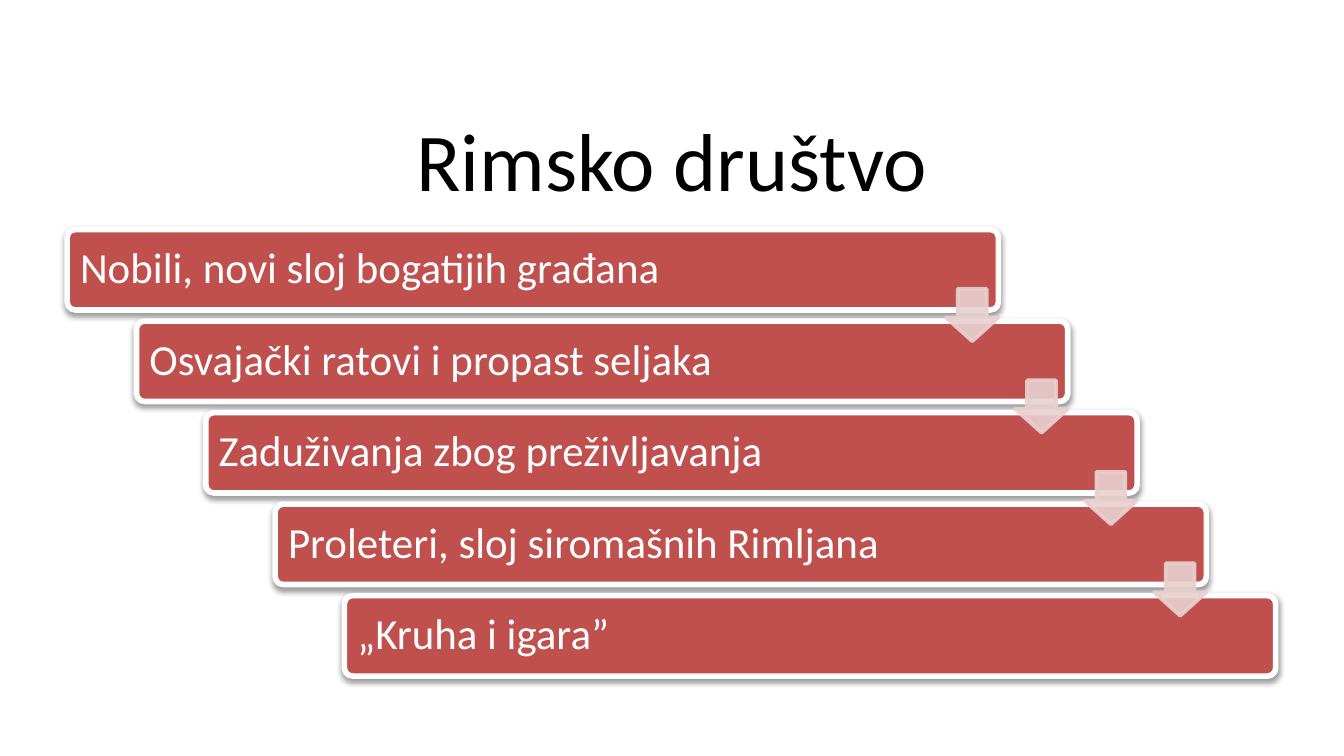
from lxml.etree import SubElement
from pptx import Presentation
from pptx.dml.color import RGBColor
from pptx.enum.shapes import MSO_SHAPE as Shape
from pptx.enum.text import MSO_ANCHOR as Anchor, PP_ALIGN as Align
from pptx.oxml.ns import qn
from pptx.util import Cm, Pt

TITLE = "Rimsko društvo"
STEPS = [
    "Nobili, novi sloj bogatijih građana",
    "Osvajački ratovi i propast seljaka",
    "Zaduživanja zbog preživljavanja",
    "Proleteri, sloj siromašnih Rimljana",
    "„Kruha i igara”",
]
FONT = "Calibri"
RED, PINK, WHITE, BLACK = "C0504D", "E8D0D0", "FFFFFF", "000000"

# All lengths in centimetres
BAR_LEFT, BAR_TOP, BAR_WIDTH, BAR_HEIGHT = 1.27, 4.34, 17.6, 1.52
ARROW_LEFT, ARROW_TOP, ARROW_SIZE = 17.88, 5.46, 0.99
STEP_X, STEP_Y = 1.31, 1.73


def color(value):
    return RGBColor.from_string(value)


def write(frame, text, size, value, align):
    frame.word_wrap = True
    frame.vertical_anchor = Anchor.MIDDLE
    paragraph = frame.paragraphs[0]
    paragraph.text = text
    paragraph.alignment = align
    paragraph.line_spacing = 0.9
    font = paragraph.font
    font.name, font.size = FONT, Pt(size)
    font.color.rgb = color(value)


def add_block(slide, kind, left, top, width, height, fill, line, line_width):
    block = slide.shapes.add_shape(kind, Cm(left), Cm(top), Cm(width), Cm(height))
    block.shadow.inherit = False
    block.fill.solid()
    block.fill.fore_color.rgb = color(fill)
    block.line.color.rgb = color(line)
    block.line.width = Pt(line_width)
    return block


def add_shadow(block):
    effects = block._element.spPr.find(qn("a:effectLst"))
    shadow = SubElement(effects, qn("a:outerShdw"), blurRad=str(Pt(3.1)),
                        dist=str(Pt(1.6)), dir="5400000", rotWithShape="0")
    tint = SubElement(shadow, qn("a:srgbClr"), val=BLACK)
    SubElement(tint, qn("a:alpha"), val="38000")


def add_bar(slide, index, text):
    bar = add_block(slide, Shape.ROUNDED_RECTANGLE,
                    BAR_LEFT + index * STEP_X, BAR_TOP + index * STEP_Y,
                    BAR_WIDTH, BAR_HEIGHT, RED, WHITE, 3)
    bar.adjustments[0] = 0.1
    add_shadow(bar)
    frame = bar.text_frame
    frame.margin_left = frame.margin_right = Cm(0.2)
    write(frame, text, 23, WHITE, Align.LEFT)


def add_arrow(slide, index):
    arrow = add_block(slide, Shape.DOWN_ARROW,
                      ARROW_LEFT + index * STEP_X, ARROW_TOP + index * STEP_Y,
                      ARROW_SIZE, ARROW_SIZE, PINK, PINK, 2)
    arrow.adjustments[0] = 0.55
    arrow.adjustments[1] = 0.45
    for tint in arrow._element.spPr.iter(qn("a:srgbClr")):
        SubElement(tint, qn("a:alpha"), val="90000")


def main():
    deck = Presentation()
    deck.slide_width, deck.slide_height = Cm(25.4), Cm(14.29)
    slide = deck.slides.add_slide(deck.slide_layouts[5])

    title = slide.shapes.title
    title.left, title.top = Cm(1.27), Cm(2.13)
    title.width, title.height = Cm(22.86), Cm(1.98)
    write(title.text_frame, TITLE, 44, BLACK, Align.CENTER)

    for index, text in enumerate(STEPS):
        add_bar(slide, index, text)
    for index in range(len(STEPS) - 1):
        add_arrow(slide, index)

    deck.save("out.pptx")


if __name__ == "__main__":
    main()
